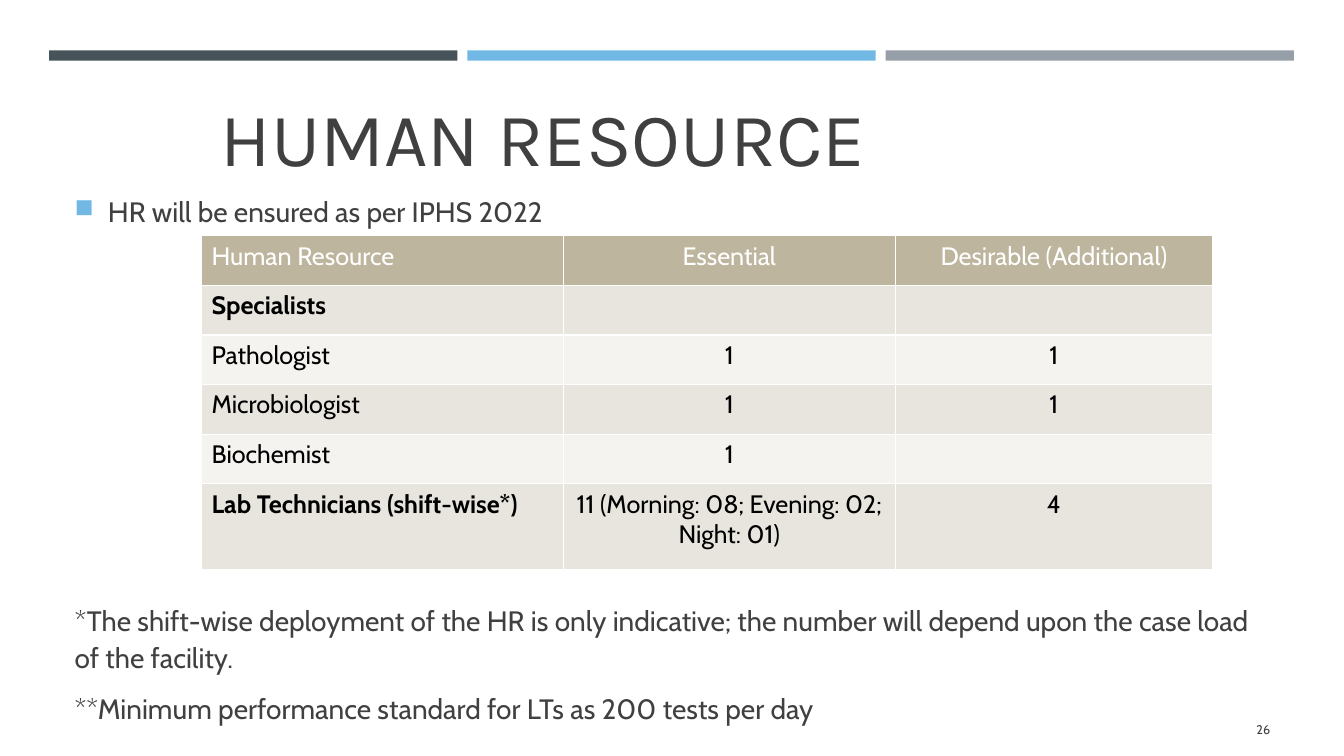
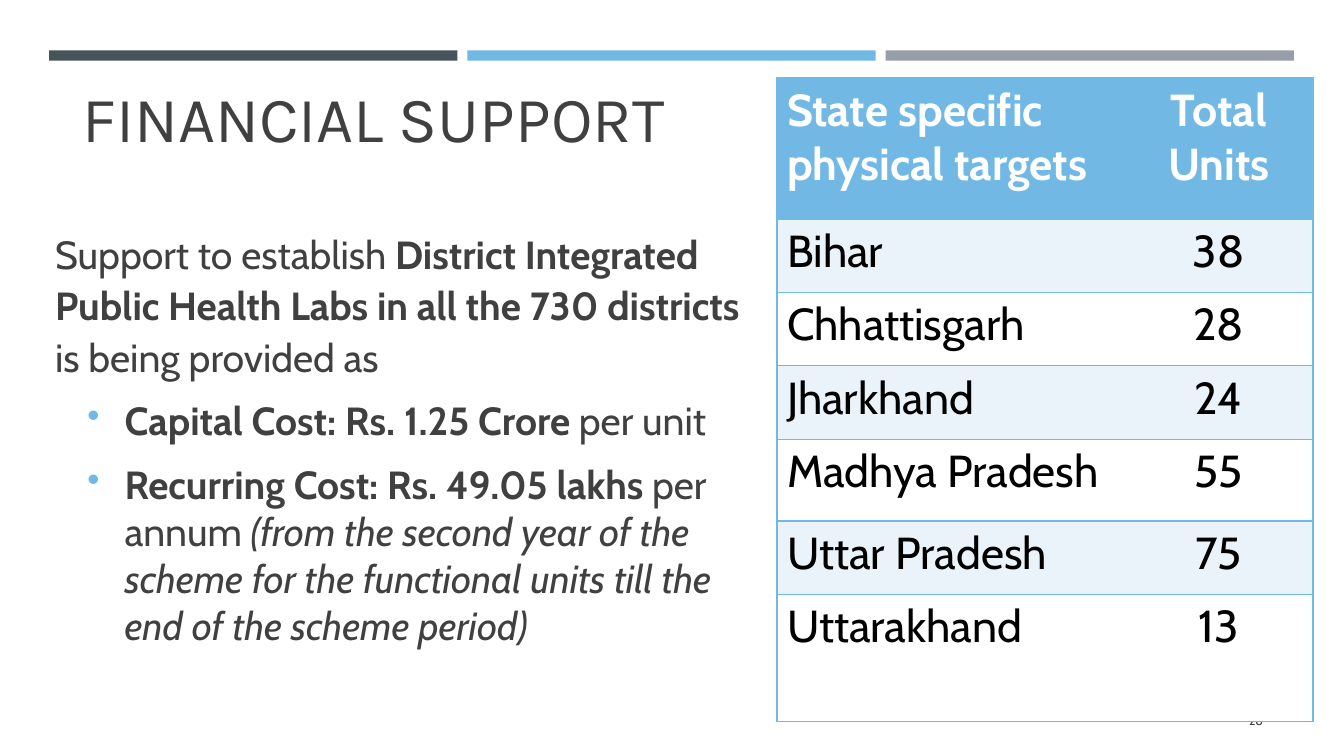
"""Build two slides on laboratory staffing and financial support."""
from dataclasses import dataclass

from lxml.etree import SubElement
from pptx import Presentation
from pptx.dml.color import RGBColor
from pptx.enum.shapes import MSO_SHAPE
from pptx.enum.text import MSO_ANCHOR, PP_ALIGN
from pptx.oxml.ns import qn
from pptx.util import Cm, Pt


@dataclass(frozen=True)
class Theme:
    heading_font: str = "Karla"
    body_font: str = "Cabin"
    ink: str = "404040"
    black: str = "000000"
    white: str = "FFFFFF"
    slate: str = "465359"
    sky: str = "71B9E4"
    steel: str = "969FA7"
    sand: str = "BDB59D"
    sand_bands: tuple = ("E8E5DF", "F4F3EF")
    sky_bands: tuple = ("EBF3FA", "FFFFFF")
    staff_title: int = 54
    support_title: int = 46
    staff_body: int = 20
    support_body: int = 28
    staff_cell: int = 18
    target_cell: int = 32
    page_number: int = 9


THEME = Theme()

STAFF_INTRO = [{"runs": [("HR will be ensured as per IPHS 2022", "")],
                "bullet": "■", "indent": 0.84, "spacing": 1.1}]
STAFF_NOTES = [
    {"runs": [("*The shift-wise deployment of the HR is only indicative; the number "
               "will depend upon the case load of the facility.", "")], "spacing": 1.1},
    {"runs": [("**Minimum performance standard for LTs as 200 tests per day", "")],
     "spacing": 1.1},
]
STAFF_ROWS = [
    ("Human Resource", "Essential", "Desirable (Additional)"),
    ("Specialists", "", ""),
    ("Pathologist", "1", "1"),
    ("Microbiologist", "1", "1"),
    ("Biochemist", "1", ""),
    ("Lab Technicians (shift-wise*)", "11 (Morning: 08; Evening: 02; Night: 01)", "4"),
]
STAFF_BOLD = {"Specialists", "Lab Technicians (shift-wise*)"}

SUPPORT_TEXT = [
    {"runs": [("Support to establish ", ""),
              ("District Integrated Public Health Labs in all the 730 districts", "b"),
              (" is being provided as", "")], "spacing": 1.1},
    {"runs": [("Capital Cost: Rs. 1.25 Crore ", "b"), ("per unit", "")],
     "bullet": "•", "indent": 0.94, "margin": 1.75},
    {"runs": [("Recurring Cost: Rs. 49.05 lakhs ", "b"), ("per annum ", ""),
              ("(from the second year of the scheme for the functional units "
               "till the end of the scheme period)", "i")],
     "bullet": "•", "indent": 0.94, "margin": 1.75},
]
TARGET_ROWS = [
    ("State specific physical targets", "Total Units"),
    ("Bihar", "38"),
    ("Chhattisgarh", "28"),
    ("Jharkhand", "24"),
    ("Madhya Pradesh", "55"),
    ("Uttar Pradesh", "75"),
    ("Uttarakhand", "13"),
]
TARGET_BOLD = set(TARGET_ROWS[0])


def style_font(font, size, color=THEME.ink, face=THEME.body_font, marks=""):
    font.name = face
    font.size = Pt(size)
    font.color.rgb = RGBColor.from_string(color)
    font.bold = "b" in marks
    font.italic = "i" in marks


def add_bullet(paragraph, item):
    properties = paragraph._p.get_or_add_pPr()
    properties.set("marL", str(Cm(item.get("margin", item["indent"]))))
    properties.set("indent", str(-Cm(item["indent"])))
    SubElement(SubElement(properties, qn("a:buClr")), qn("a:srgbClr"), val=THEME.sky)
    SubElement(properties, qn("a:buSzPct"), val="92000")
    SubElement(properties, qn("a:buChar"), char=item["bullet"])


def text_frame_at(slide, area, anchor):
    frame = slide.shapes.add_textbox(*map(Cm, area)).text_frame
    frame.word_wrap = True
    frame.vertical_anchor = anchor
    return frame


def add_label(slide, text, area, anchor, size, face, align):
    frame = text_frame_at(slide, area, anchor)
    frame.text = text
    paragraph = frame.paragraphs[0]
    paragraph.alignment = align
    style_font(paragraph.runs[0].font, size, face=face)


def add_body(slide, items, area, size, anchor=MSO_ANCHOR.TOP):
    frame = text_frame_at(slide, area, anchor)
    for index, item in enumerate(items):
        paragraph = frame.add_paragraph() if index else frame.paragraphs[0]
        if "bullet" in item:
            add_bullet(paragraph, item)
        paragraph.line_spacing = item.get("spacing", 1.0)
        paragraph.space_before = Pt(size * 0.2 if index else 0)
        paragraph.space_after = Pt(6)
        for text, marks in item["runs"]:
            run = paragraph.add_run()
            run.text = text
            style_font(run.font, size, marks=marks)


def set_borders(cell, color, sides):
    properties = cell._tc.get_or_add_tcPr()
    for side in "LRTB":
        line = SubElement(properties, qn(f"a:ln{side}"), w=str(Pt(1)))
        if side in sides:
            SubElement(SubElement(line, qn("a:solidFill")), qn("a:srgbClr"), val=color)
        else:
            SubElement(line, qn("a:noFill"))


def add_grid(slide, rows, corner, widths, heights, size, header, bands, line, bold,
             inner_verticals):
    area = (*corner, sum(widths), sum(heights))
    grid = slide.shapes.add_table(len(rows), len(widths), *map(Cm, area)).table
    grid.horz_banding = False
    for column, width in zip(grid.columns, widths):
        column.width = Cm(width)
    for row, height in zip(grid.rows, heights):
        row.height = Cm(height)
    last = len(widths) - 1
    for r, values in enumerate(rows):
        for c, value in enumerate(values):
            cell = grid.cell(r, c)
            sides = "TB" + "L" * (inner_verticals or c == 0)
            sides += "R" * (inner_verticals or c == last)
            set_borders(cell, line, sides)
            cell.fill.solid()
            cell.fill.fore_color.rgb = RGBColor.from_string(
                bands[(r - 1) % 2] if r else header)
            cell.text = value
            paragraph = cell.text_frame.paragraphs[0]
            paragraph.alignment = PP_ALIGN.CENTER if c else PP_ALIGN.LEFT
            style_font(paragraph.font, size)
            for run in paragraph.runs:
                style_font(run.font, size, THEME.black if r else THEME.white,
                           marks="b" if value in bold else "")


def add_base(deck, title, title_area, title_size, number, number_area):
    slide = deck.slides.add_slide(deck.slide_layouts[6])
    for index, color in enumerate((THEME.slate, THEME.sky, THEME.steel)):
        band = slide.shapes.add_shape(MSO_SHAPE.RECTANGLE, Cm(1.24 + index * 10.54),
                                      Cm(1.27), Cm(10.29), Cm(0.26))
        band.shadow.inherit = False
        band.fill.solid()
        band.fill.fore_color.rgb = RGBColor.from_string(color)
        band.line.fill.background()
    add_label(slide, title, title_area, MSO_ANCHOR.BOTTOM, title_size,
              THEME.heading_font, PP_ALIGN.LEFT)
    add_label(slide, number, number_area, MSO_ANCHOR.MIDDLE, THEME.page_number,
              THEME.body_font, PP_ALIGN.RIGHT)
    return slide


def build_staff(deck):
    slide = add_base(deck, "HUMAN RESOURCE", (5.31, 1.02, 26.21, 3.68),
                     THEME.staff_title, "26", (29.34, 17.86, 2.92, 1.02))
    add_body(slide, STAFF_INTRO, (1.63, 4.7, 30.63, 1.2), THEME.staff_body)
    add_body(slide, STAFF_NOTES, (1.63, 15.01, 30.63, 3.5), THEME.staff_body)
    add_grid(slide, STAFF_ROWS, (5.08, 5.94), (9.12, 8.36, 8), [1.25] * 5 + [2.16],
             THEME.staff_cell, THEME.sand, THEME.sand_bands, THEME.white,
             STAFF_BOLD, True)


def build_support(deck):
    slide = add_base(deck, "FINANCIAL SUPPORT", (1.83, 0.89, 27.41, 3.15),
                     THEME.support_title, "28", (24.46, 17.65, 7.62, 1.02))
    add_body(slide, SUPPORT_TEXT, (1.14, 3.84, 17.75, 14.33), THEME.support_body,
             MSO_ANCHOR.MIDDLE)
    add_grid(slide, TARGET_ROWS, (19.58, 1.96), (8.76, 4.75),
             [3.56, 1.85, 1.85, 1.85, 2.06, 1.85, 3.2], THEME.target_cell,
             THEME.sky, THEME.sky_bands, THEME.sky, TARGET_BOLD, False)


def main():
    deck = Presentation()
    deck.slide_width, deck.slide_height = Cm(33.87), Cm(19.05)
    build_staff(deck)
    build_support(deck)
    deck.save("out.pptx")


if __name__ == "__main__":
    main()
